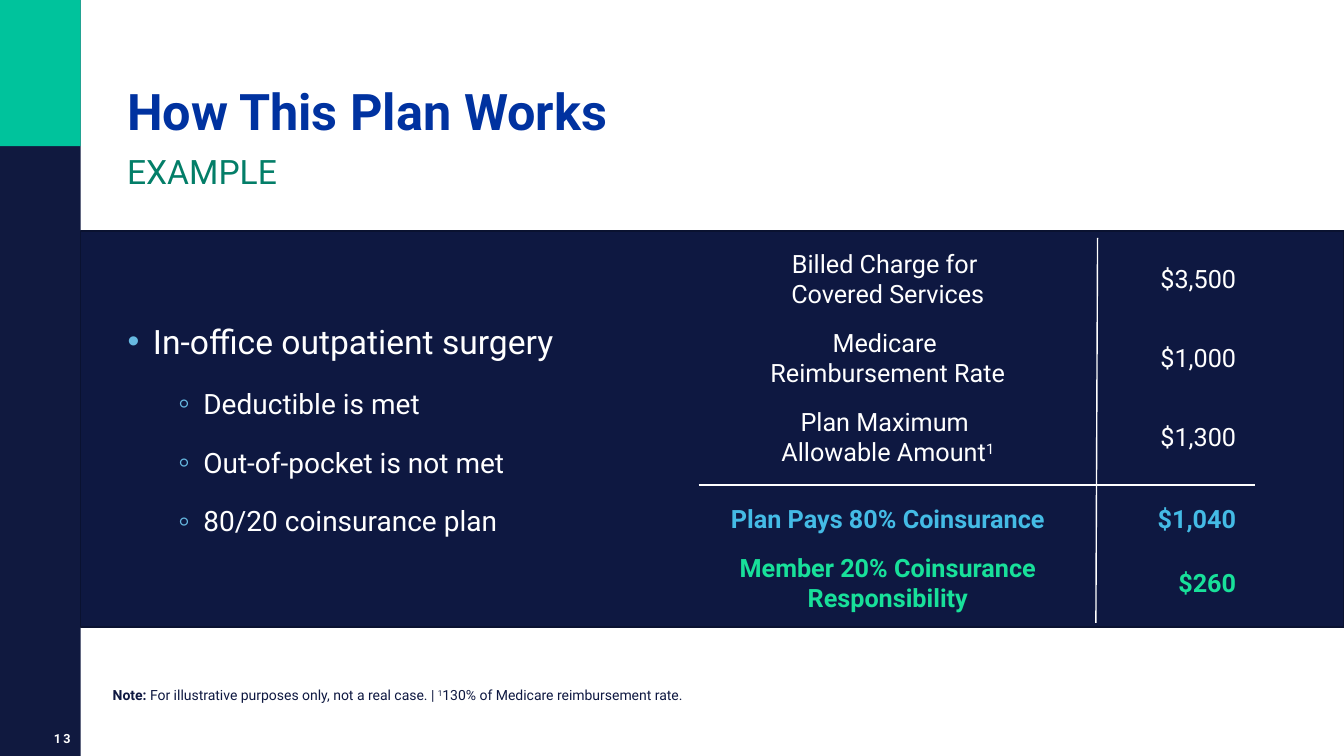
from lxml.etree import SubElement
from pptx import Presentation
from pptx.dml.color import RGBColor
from pptx.enum.shapes import MSO_CONNECTOR as Connector, MSO_SHAPE as Shape
from pptx.enum.text import MSO_ANCHOR as Anchor, PP_ALIGN as Align
from pptx.oxml.ns import qn
from pptx.util import Pt

COLORS = {
    "white": "FFFFFF", "sidebar": "10193F", "teal": "00C39C", "navy": "0E1841",
    "edge": "0A1230", "title": "0032A0", "subtitle": "037E68",
    "bullet": "67B9E1", "plan": "44BBE5", "member": "18E09A",
}
FONT = "Roboto"
TITLE, SUBTITLE, PAGE_NUMBER = "How This Plan Works", "EXAMPLE", "13"

# text, level
SCENARIO = [
    ("In-office outpatient surgery", 0),
    ("Deductible is met", 1),
    ("Out-of-pocket is not met", 1),
    ("80/20 coinsurance plan", 1),
]
# bullet, left margin, size in percent, text size
BULLET_LEVELS = [("•", 18, 100, 24), ("◦", 54, 120, 20)]

# label, footnote mark, amount, color, bold, vertical centre
COST_ROWS = [
    ("Billed Charge for \nCovered Services", "", "$3,500", "white", False, 199),
    ("Medicare \nReimbursement Rate", "", "$1,000", "white", False, 255.5),
    ("Plan Maximum \nAllowable Amount", "1", "$1,300", "white", False, 312),
    ("Plan Pays 80% Coinsurance", "", "$1,040", "plan", True, 370),
    ("Member 20% Coinsurance\nResponsibility", "", "$260", "member", True, 416),
]
# text, bold, superscript
NOTE = [
    ("Note: ", True, False),
    ("For illustrative purposes only, not a real case. | ", False, False),
    ("1", False, True),
    ("130% of Medicare reimbursement rate.", False, False),
]

WIDTH, HEIGHT = 960, 540
SIDEBAR_WIDTH = 57.6
HEADER_HEIGHT = 104.4
PANEL_TOP, PANEL_HEIGHT = 165, 283
TEXT_LEFT, TEXT_WIDTH = 83.7, 830
LABEL_LEFT, LABEL_WIDTH = 485.3, 297.8
AMOUNT_LEFT, AMOUNT_WIDTH = 803, 80
LINE_HEIGHT = 22
# start x, start y, end x, end y, width
RULES = [(499, 346.5, 896.5, 346.5, 1.5), (784, 170, 782.8, 445, 1)]


def color(name):
    return RGBColor.from_string(COLORS[name])


def add_block(slide, box, fill, line=None):
    block = slide.shapes.add_shape(Shape.RECTANGLE, *map(Pt, box))
    block.shadow.inherit = False
    block.fill.solid()
    block.fill.fore_color.rgb = color(fill)
    if line:
        block.line.color.rgb = color(line)
        block.line.width = Pt(1)
    else:
        block.line.fill.background()


def add_frame(slide, box, anchor=Anchor.TOP, inset=None):
    frame = slide.shapes.add_textbox(*map(Pt, box)).text_frame
    frame.word_wrap = True
    frame.vertical_anchor = anchor
    if inset is not None:
        frame.margin_left = frame.margin_right = Pt(inset)
        frame.margin_top = frame.margin_bottom = Pt(inset)
    return frame


def style(paragraph, size, color_name, bold=None, align=Align.LEFT):
    paragraph.alignment = align
    font = paragraph.font
    font.name, font.size, font.bold = FONT, Pt(size), bold
    font.color.rgb = color(color_name)


def add_superscript(paragraph, text):
    run = paragraph.add_run()
    run.text = text
    run._r.get_or_add_rPr().set("baseline", "30000")


def add_bullet(paragraph, character, margin, percent):
    properties = paragraph._p.get_or_add_pPr()
    properties.set("marL", str(Pt(margin)))
    properties.set("indent", str(Pt(-18)))
    bullet_color = SubElement(properties, qn("a:buClr"))
    SubElement(bullet_color, qn("a:srgbClr"), val=COLORS["bullet"])
    SubElement(properties, qn("a:buSzPct"), val=str(percent * 1000))
    SubElement(properties, qn("a:buFont"), typeface="Arial")
    SubElement(properties, qn("a:buChar"), char=character)


def add_headings(slide):
    title_box = (TEXT_LEFT, 0, TEXT_WIDTH, HEADER_HEIGHT)
    title = add_frame(slide, title_box, Anchor.BOTTOM).paragraphs[0]
    title.text = TITLE
    title.line_spacing = 0.9
    style(title, 36, "title", True)
    subtitle_box = (TEXT_LEFT, HEADER_HEIGHT, TEXT_WIDTH, 36.7)
    subtitle = add_frame(slide, subtitle_box).paragraphs[0]
    subtitle.text = SUBTITLE
    style(subtitle, 24, "subtitle")


def add_scenario(slide):
    box = (TEXT_LEFT + 0.5, PANEL_TOP, 371.5, PANEL_HEIGHT)
    frame = add_frame(slide, box, Anchor.MIDDLE)
    for index, (text, level) in enumerate(SCENARIO):
        paragraph = frame.add_paragraph() if index else frame.paragraphs[0]
        paragraph.text = text
        paragraph.level = level
        character, margin, percent, size = BULLET_LEVELS[level]
        add_bullet(paragraph, character, margin, percent)
        paragraph.space_before = Pt(9 if index else 0)
        paragraph.space_after = Pt(9)
        style(paragraph, size, "white")


def add_costs(slide):
    for label, mark, amount, color_name, bold, centre in COST_ROWS:
        columns = [
            (label, LABEL_LEFT, LABEL_WIDTH, Align.CENTER),
            (amount, AMOUNT_LEFT, AMOUNT_WIDTH, Align.RIGHT),
        ]
        for text, left, width, align in columns:
            height = LINE_HEIGHT * len(text.splitlines())
            box = (left, centre - height / 2, width, height)
            paragraph = add_frame(slide, box, Anchor.MIDDLE, 0).paragraphs[0]
            paragraph.text = text.replace("\n", "\v")
            if mark and text == label:
                add_superscript(paragraph, mark)
            style(paragraph, 18, color_name, bold, align)


def add_rules(slide):
    for *ends, width in RULES:
        rule = slide.shapes.add_connector(Connector.STRAIGHT, *map(Pt, ends))
        rule.line.color.rgb = color("white")
        rule.line.width = Pt(width)
        SubElement(rule._element.spPr, qn("a:effectLst"))


def add_note(slide):
    paragraph = add_frame(slide, (73.4, 486.7, 470, 40)).paragraphs[0]
    for text, bold, superscript in NOTE:
        if superscript:
            add_superscript(paragraph, text)
        else:
            run = paragraph.add_run()
            run.text = text
            run.font.bold = bold
    style(paragraph, 10, "navy")


def add_page_number(slide):
    box = (0, 515.5, SIDEBAR_WIDTH, 24.5)
    paragraph = add_frame(slide, box, Anchor.MIDDLE).paragraphs[0]
    paragraph.text = PAGE_NUMBER
    paragraph.runs[0]._r.get_or_add_rPr().set("spc", "170")
    style(paragraph, 9, "white", True, Align.RIGHT)


def main():
    presentation = Presentation()
    presentation.slide_width, presentation.slide_height = Pt(WIDTH), Pt(HEIGHT)
    slide = presentation.slides.add_slide(presentation.slide_layouts[6])
    add_block(slide, (0, 0, SIDEBAR_WIDTH, HEIGHT), "sidebar")
    add_block(slide, (0, 0, SIDEBAR_WIDTH, HEADER_HEIGHT), "teal")
    panel = (SIDEBAR_WIDTH, PANEL_TOP, WIDTH - SIDEBAR_WIDTH, PANEL_HEIGHT)
    add_block(slide, panel, "navy", "edge")
    add_page_number(slide)
    add_headings(slide)
    add_scenario(slide)
    add_costs(slide)
    add_rules(slide)
    add_note(slide)
    presentation.save("out.pptx")


if __name__ == "__main__":
    main()
